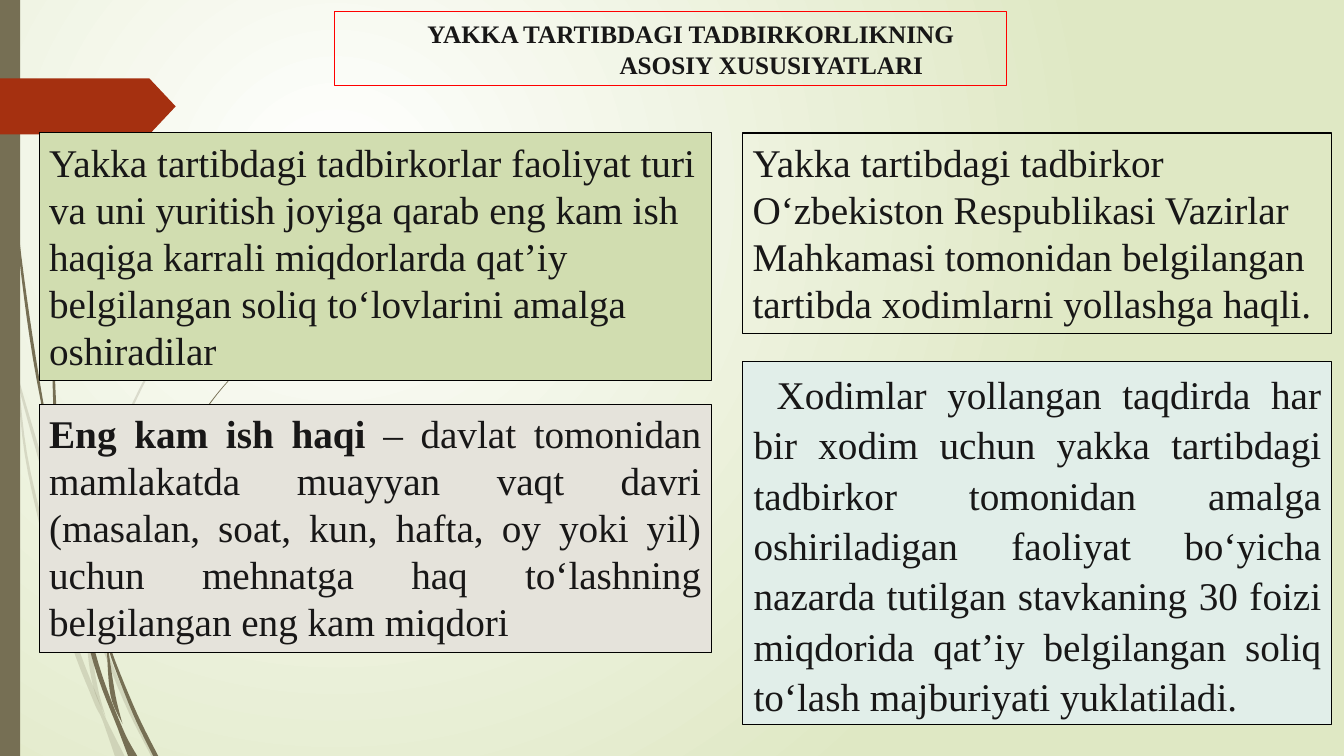
from lxml import etree
from pptx import Presentation
from pptx.dml.color import RGBColor
from pptx.enum import shapes, text
from pptx.oxml import ns
from pptx.util import Pt

FONT = "Times New Roman"
COLORS = {
    "ink": "181717", "border": "000000", "title_border": "FF0000",
    "centre": "FFFFFF", "edge": "DFE8C4", "stem": "766F54", "arrow": "A53010",
    "green": "D1DDB0", "beige": "E5E3DB", "mint": "E1EEE9",
}

TITLE = "YAKKA TARTIBDAGI TADBIRKORLIKNING ASOSIY XUSUSIYATLARI"
LEFT, RIGHT = (28, 480), (530.5, 420.5)  # column: left, width
LEFT_ALIGN, JUSTIFY = text.PP_ALIGN.LEFT, text.PP_ALIGN.JUSTIFY
# column, top, height, fill, alignment, (bold start, rest)
CARDS = [
    (LEFT, 95, 177, "green", LEFT_ALIGN,
     ("", "Yakka tartibdagi tadbirkorlar faoliyat turi va uni yuritish joyiga "
          "qarab eng kam ish haqiga karrali miqdorlarda qat’iy belgilangan soliq "
          "to‘lovlarini amalga oshiradilar")),
    (LEFT, 289, 177, "beige", JUSTIFY,
     ("Eng kam ish haqi ",
      "– davlat tomonidan mamlakatda muayyan vaqt davri (masalan, soat, kun, "
      "hafta, oy yoki yil) uchun mehnatga haq to‘lashning belgilangan eng kam "
      "miqdori")),
    (RIGHT, 95, 143, None, LEFT_ALIGN,
     ("", "Yakka tartibdagi tadbirkor O‘zbekiston Respublikasi Vazirlar "
          "Mahkamasi tomonidan belgilangan tartibda xodimlarni yollashga haqli.")),
    (RIGHT, 258.5, 259, "mint", JUSTIFY,
     ("", "Xodimlar yollangan taqdirda har bir xodim uchun yakka tartibdagi "
          "tadbirkor tomonidan amalga oshiriladigan faoliyat bo‘yicha nazarda "
          "tutilgan stavkaning 30 foizi miqdorida qat’iy belgilangan soliq "
          "to‘lash majburiyati yuklatiladi.")),
]

# Grass blades: (left edge, height on the slide, width) along each blade
PALE_BLADES = [
    [(0, 203, 0), (0, 215, 4), (8, 252, 1), (12, 271, 1), (20, 338, 2),
     (47, 447, 4), (66, 499, 4), (73, 514, 3), (82, 540, 7)],
    [(10, 248, 0), (12, 271, 1.5), (41.5, 376, 3.5), (61, 430, 2),
     (64, 439, 2.5), (88, 500, 3), (108, 540, 4)],
    [(60.5, 431, 1), (62.5, 465, 3), (67, 492, 3), (75.5, 512, 0)],
    [(61, 429, 2), (61, 420, 2), (77, 332, 2), (114, 250.5, 1.5),
     (164, 176, 1), (193, 142, 1), (224.5, 110, 0.3)],
]
DARK_BLADES = [
    [(2.2, 0, 0.7), (5, 79, 0.8), (12, 168, 1.5), (23.5, 256, 2.2),
     (40.5, 343, 0.5), (43, 364, 3), (49, 401, 3), (67, 474.5, 3.5),
     (84, 520, 3.5), (91.5, 540, 6.5)],
    [(50, 101.5, 0.3), (44.6, 139, 0.7), (40.3, 176, 1.4), (37.4, 251, 1.5),
     (39.6, 323, 2.5), (43, 340, 0.3)],
    [(76.3, 454, 1), (79.5, 470, 2), (95, 510, 3), (109.4, 540, 3.6)],
    [(76.3, 464, 1), (79, 497, 3.5), (87.5, 517, 0)],
    [(76.3, 454, 3), (88, 397, 2), (112.3, 341, 1.5), (147, 291.6, 0.8),
     (166, 268.6, 0.6), (187, 247.7, 0.3)],
]


def rgb(name):
    return RGBColor.from_string(COLORS[name])


def paint(shape, fill=None, border=None):
    if fill:
        shape.fill.solid()
        shape.fill.fore_color.rgb = rgb(fill)
    else:
        shape.fill.background()
    if border:
        shape.line.color.rgb = rgb(border)
        shape.line.width = Pt(0.75)
    else:
        shape.line.fill.background()


def smooth(knots, steps=6):
    """Catmull-Rom points through the knots."""
    padded = [knots[0], *knots, knots[-1]]
    points = []
    for a, b, c, d in zip(padded, padded[1:], padded[2:], padded[3:]):
        for step in range(steps):
            t = step / steps
            points.append([
                q + t * (r - p) / 2 + t**2 * (p - 2.5 * q + 2 * r - s / 2)
                + t**3 * (1.5 * (q - r) + (s - p) / 2)
                for p, q, r, s in zip(a, b, c, d)])
    return points + [knots[-1]]


def add_blade(slide, knots, alpha=None):
    spine = smooth(knots)
    outline = [(Pt(x), Pt(y)) for x, y, _ in spine]
    outline += [(Pt(x + max(width, 0)), Pt(y)) for x, y, width in reversed(spine)]
    builder = slide.shapes.build_freeform(*outline[0])
    builder.add_line_segments(outline[1:])
    blade = builder.convert_to_shape()
    blade.shadow.inherit = False
    paint(blade, "stem")
    if alpha:
        color = next(blade._element.spPr.iter(ns.qn("a:srgbClr")))
        etree.SubElement(color, ns.qn("a:alpha")).set("val", str(alpha * 1000))


def add_decor(slide, preset, left, top, width, height, fill):
    decor = slide.shapes.add_shape(preset, Pt(left), Pt(top), Pt(width), Pt(height))
    decor.shadow.inherit = False
    paint(decor, fill)
    return decor


def paint_background(slide):
    fill = slide.background.fill
    fill.gradient()
    for stop, name in zip(fill.gradient_stops, ("centre", "edge")):
        stop.color.rgb = rgb(name)
    linear = next(slide._element.iter(ns.qn("a:lin")))
    radial = etree.Element(ns.qn("a:path"), {"path": "circle"})
    etree.SubElement(radial, ns.qn("a:fillToRect"),
                     {"l": "50000", "t": "50000", "r": "100000", "b": "100000"})
    linear.getparent().replace(linear, radial)


def style_run(run, size, bold):
    run.font.name, run.font.size, run.font.bold = FONT, Pt(size), bold
    run.font.color.rgb = rgb("ink")


def set_spacing(paragraph, margin, indent, line, after):
    paragraph.line_spacing = line
    paragraph.space_after = Pt(after)
    properties = paragraph._p.get_or_add_pPr()
    properties.set("marL", str(Pt(margin)))
    properties.set("indent", str(Pt(indent)))


def add_title(slide):
    title = slide.shapes.title
    title.left, title.top, title.width, title.height = map(Pt, (239, 8.5, 480, 52.5))
    paint(title, border="title_border")
    frame = title.text_frame
    frame.text = TITLE
    frame.auto_size = text.MSO_AUTO_SIZE.NONE
    frame.vertical_anchor = text.MSO_ANCHOR.TOP
    heading = frame.paragraphs[0]
    heading.alignment = text.PP_ALIGN.CENTER
    set_spacing(heading, 144, -115, 1.03, 8.4)
    style_run(heading.runs[0], 18, True)


def add_card(slide, column, top, height, fill, alignment, parts):
    left, width = column
    card = slide.shapes.add_textbox(Pt(left), Pt(top), Pt(width), Pt(height))
    paint(card, fill, "border")
    card.text_frame.word_wrap = True
    card.text_frame.auto_size = text.MSO_AUTO_SIZE.SHAPE_TO_FIT_TEXT
    paragraph = card.text_frame.paragraphs[0]
    paragraph.alignment = alignment
    for part, bold in zip(parts, (True, False)):
        if part:
            run = paragraph.add_run()
            run.text = part
            style_run(run, 28, bold)
    return paragraph


def main():
    deck = Presentation()
    deck.slide_width, deck.slide_height = Pt(960), Pt(540)
    slide = deck.slides.add_slide(deck.slide_layouts[5])
    paint_background(slide)
    for knots in PALE_BLADES:
        add_blade(slide, knots, alpha=20)
    for knots in DARK_BLADES:
        add_blade(slide, knots)
    add_decor(slide, shapes.MSO_SHAPE.RECTANGLE, 0, 0, 14.5, 540, "stem")
    arrow = add_decor(slide, shapes.MSO_SHAPE.PENTAGON, 0, 56, 125.5, 40, "arrow")
    arrow.adjustments[0] = 0.47
    add_title(slide)
    for card in CARDS:
        paragraph = add_card(slide, *card)
    set_spacing(paragraph, 0.75, 16.5, 1.07, 13.3)
    deck.save("out.pptx")


if __name__ == "__main__":
    main()
